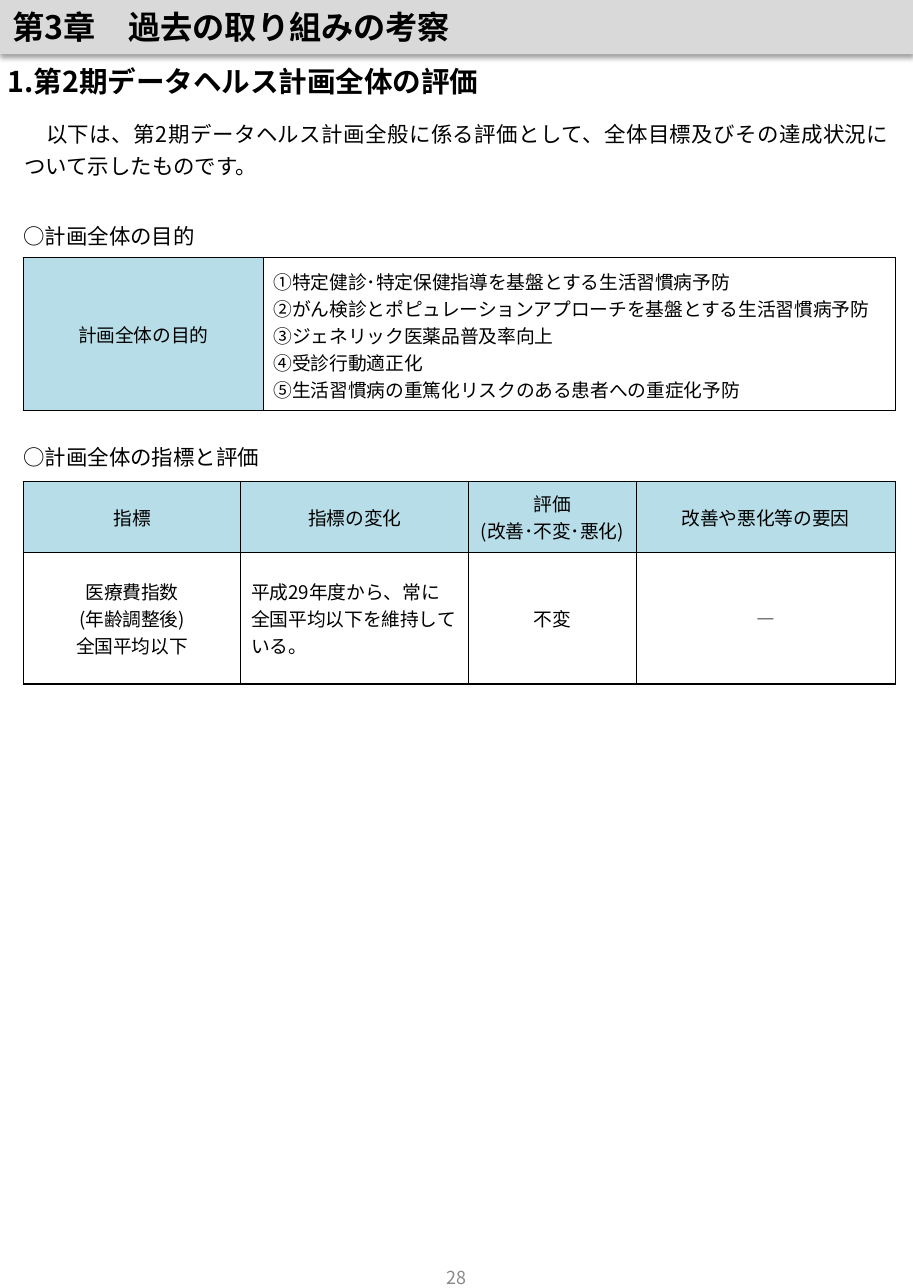
from lxml import etree
from pptx import Presentation
from pptx.dml.color import RGBColor
from pptx.enum import shapes, text
from pptx.oxml import parse_xml
from pptx.oxml.ns import nsdecls, qn
from pptx.util import Pt

FONT = "Noto Sans CJK JP"
BLACK = RGBColor(0x00, 0x00, 0x00)
BAND_GRAY = RGBColor(0xD9, 0xD9, 0xD9)
PAGE_GRAY = RGBColor(0x89, 0x89, 0x89)
LABEL_BLUE = RGBColor(0xB7, 0xDE, 0xE8)

LEFT, CENTER, JUSTIFY = (text.PP_ALIGN.LEFT, text.PP_ALIGN.CENTER,
                         text.PP_ALIGN.JUSTIFY)
MIDDLE = text.MSO_ANCHOR.MIDDLE
MARGIN = 13
ROOMY = (5.76, 5.76)
TIGHT = (2.88, 1.44)


def write(frame, lines, size, color=BLACK, bold=False, align=LEFT, spacing=None):
    """Fill a text frame with one paragraph per line."""
    frame.word_wrap = True
    for i, line in enumerate(lines):
        paragraph = frame.add_paragraph() if i else frame.paragraphs[0]
        paragraph.text = line
        paragraph.alignment = align
        if spacing:
            paragraph.line_spacing = spacing
        font = paragraph.font
        font.size, font.bold, font.name = Pt(size), bold, FONT
        font.color.rgb = color
        # East Asian typeface follows the Latin one
        latin = paragraph._p.pPr.find(qn("a:defRPr")).find(qn("a:latin"))
        east_asian = etree.Element(qn("a:ea"), typeface=FONT)
        latin.addnext(east_asian)


def add_text(slide, box, line, size, right_inset=7.2, **style):
    frame = slide.shapes.add_textbox(*map(Pt, box)).text_frame
    frame.margin_left, frame.margin_right = 0, Pt(right_inset)
    frame.auto_size = text.MSO_AUTO_SIZE.SHAPE_TO_FIT_TEXT
    write(frame, [line], size, **style)


def add_chapter_band(slide, box, title):
    band = slide.shapes.add_shape(shapes.MSO_SHAPE.RECTANGLE, *map(Pt, box))
    band.fill.solid()
    band.fill.fore_color.rgb = BAND_GRAY
    band.line.fill.background()
    band._element.spPr.append(parse_xml(
        f'<a:effectLst {nsdecls("a")}>'
        f'<a:outerShdw blurRad="{Pt(3.1)}" dist="{Pt(1.6)}" dir="5400000" '
        'algn="t" rotWithShape="0"><a:srgbClr val="000000">'
        '<a:alpha val="38000"/></a:srgbClr></a:outerShdw></a:effectLst>'))
    band.text_frame.vertical_anchor = MIDDLE
    write(band.text_frame, [title], 18, bold=True)


def add_borders(cell):
    properties = cell._tc.get_or_add_tcPr()
    for side in ("lnL", "lnR", "lnT", "lnB"):
        properties.append(parse_xml(
            f'<a:{side} {nsdecls("a")} w="{Pt(0.75)}"><a:solidFill>'
            f'<a:srgbClr val="{BLACK}"/></a:solidFill></a:{side}>'))


def fill_cell(cell, lines, is_label, align, insets):
    add_borders(cell)
    if is_label:
        cell.fill.solid()
        cell.fill.fore_color.rgb = LABEL_BLUE
    else:
        cell.fill.background()
    cell.vertical_anchor = MIDDLE
    cell.margin_left = cell.margin_right = Pt(insets[0])
    cell.margin_top = cell.margin_bottom = Pt(insets[1])
    write(cell.text_frame, lines, 10.5, align=align)


def add_grid(slide, top, widths, heights, rows):
    """Each cell is (lines, is_label, alignment, insets)."""
    table = slide.shapes.add_table(
        len(heights), len(widths), Pt(MARGIN), Pt(top),
        Pt(sum(widths)), Pt(sum(heights))).table
    table.first_row = table.horz_banding = False
    for column, width in zip(table.columns, widths):
        column.width = Pt(width)
    for row, height, contents in zip(table.rows, heights, rows):
        row.height = Pt(height)
        for cell, content in zip(row.cells, contents):
            fill_cell(cell, *content)


def main():
    deck = Presentation()
    deck.slide_width, deck.slide_height = Pt(510.5), Pt(720)
    slide = deck.slides.add_slide(deck.slide_layouts[6])

    # Headings and introduction
    add_chapter_band(slide, (0, -0.7, 510.5, 31), "第3章　過去の取り組みの考察")
    add_text(slide, (4.3, 32.4, 483, 26.6),
             "1.第2期データヘルス計画全体の評価", 16, bold=True)
    add_text(slide, (13.5, 60.5, 491, 41),
             "　以下は、第2期データヘルス計画全般に係る評価として、"
             "全体目標及びその達成状況について示したものです。",
             12, align=JUSTIFY, spacing=1.25)

    # Table captions
    for top, caption in ((117.4, "○計画全体の目的"),
                         (241.2, "○計画全体の指標と評価")):
        add_text(slide, (MARGIN, top, 491, 22.3), caption, 12,
                 right_inset=0, spacing=1.25)

    # Purpose of the plan
    purposes = ["①特定健診･特定保健指導を基盤とする生活習慣病予防",
                "②がん検診とポピュレーションアプローチを基盤とする生活習慣病予防",
                "③ジェネリック医薬品普及率向上",
                "④受診行動適正化",
                "⑤生活習慣病の重篤化リスクのある患者への重症化予防"]
    add_grid(slide, 144, (134.3, 353.3), (85.7,),
             [[(["計画全体の目的"], True, CENTER, ROOMY),
               (purposes, False, LEFT, ROOMY)]])

    # Indicators and their evaluation
    headers = [["指標"], ["指標の変化"], ["評価", "(改善･不変･悪化)"],
               ["改善や悪化等の要因"]]
    results = [(["医療費指数", "(年齢調整後)", "全国平均以下"], CENTER),
               (["平成29年度から、常に全国平均以下を維持している。"], LEFT),
               (["不変"], CENTER), (["―"], CENTER)]
    add_grid(slide, 269.2, (121.7, 127.4, 93.6, 144.9), (39.6, 73.6),
             [[(lines, True, CENTER, TIGHT) for lines in headers],
              [(lines, False, align, ROOMY) for lines, align in results]])

    # Page number
    page = slide.shapes.add_textbox(*map(Pt, (195.8, 694.8, 118.8, 38.2)))
    page.text_frame.vertical_anchor = MIDDLE
    write(page.text_frame, ["28"], 10, color=PAGE_GRAY, align=CENTER)

    deck.save("out.pptx")


if __name__ == "__main__":
    main()
